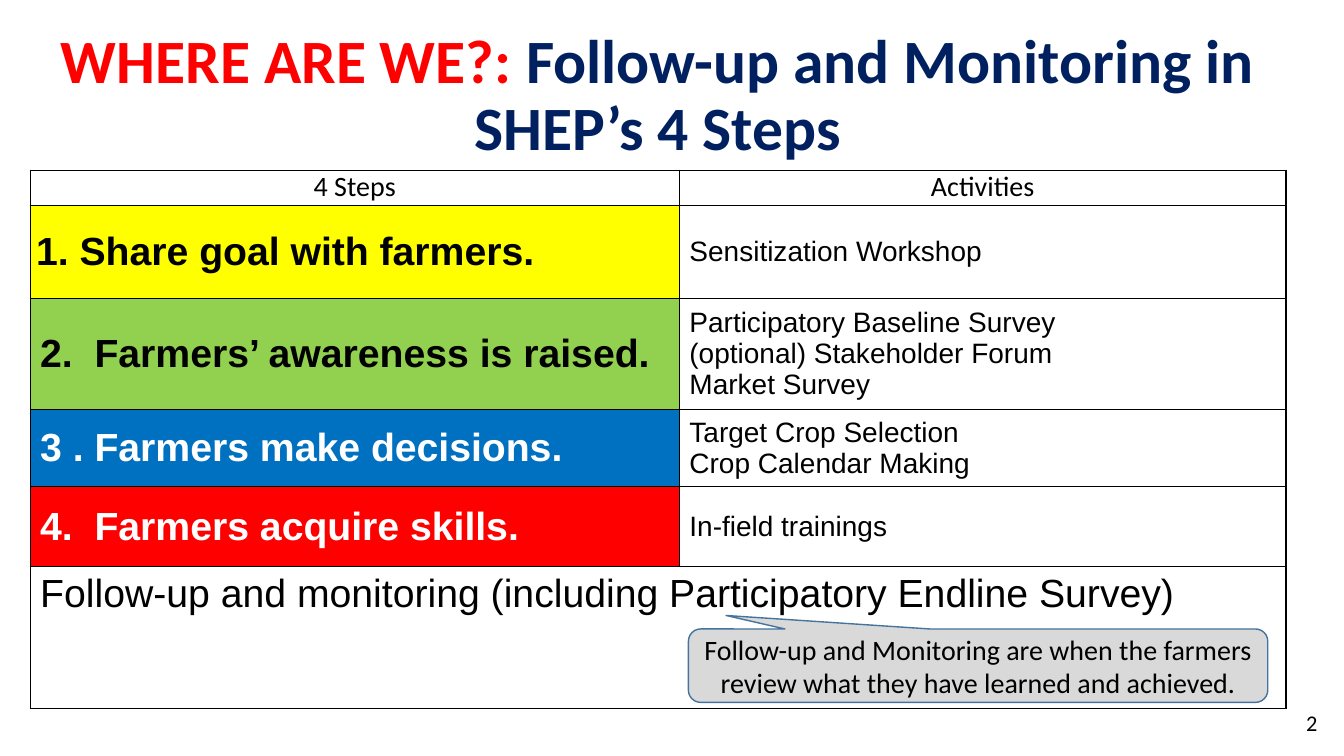
"""Build the slide on follow-up and monitoring in the four steps."""
import pptx
import pptx.dml.color
import pptx.enum.shapes
import pptx.enum.text
import pptx.oxml
import pptx.oxml.ns
import pptx.util

Cm = pptx.util.Cm
Pt = pptx.util.Pt
RGBColor = pptx.dml.color.RGBColor
ALIGN = pptx.enum.text.PP_ALIGN
MIDDLE = pptx.enum.text.MSO_ANCHOR.MIDDLE
TOP = pptx.enum.text.MSO_ANCHOR.TOP

BLACK = RGBColor(0x00, 0x00, 0x00)
WHITE = RGBColor(0xFF, 0xFF, 0xFF)
RED = RGBColor(0xFF, 0x00, 0x00)
NAVY = RGBColor(0x00, 0x20, 0x60)
YELLOW = RGBColor(0xFF, 0xFF, 0x00)
GREEN = RGBColor(0x92, 0xD0, 0x50)
BLUE = RGBColor(0x00, 0x70, 0xC0)
GREY = RGBColor(0xD9, 0xD9, 0xD9)
OUTLINE = RGBColor(0x43, 0x73, 0x9E)

TITLE_FONT = {"name": "Calibri", "size": Pt(44), "bold": True}
BODY_FONT = {"name": "Calibri", "size": Pt(20), "bold": False}
NUMBER_FONT = {"name": "Calibri", "size": Pt(16), "bold": False}
STEP_FONT = {"name": "Arial", "size": Pt(28), "bold": True}
ACTIVITY_FONT = {"name": "Arial", "size": Pt(20), "bold": False}
FOLLOW_UP_FONT = {"name": "Arial", "size": Pt(28), "bold": False}

NARROW = {"margin_left": Cm(0.15), "margin_right": Cm(0.15),
          "margin_top": Cm(0), "margin_bottom": Cm(0)}
STEPS = [
    ("1. Share goal with farmers.", YELLOW, BLACK, NARROW,
     ["Sensitization Workshop"]),
    ("2.  Farmers’ awareness is raised.", GREEN, BLACK, {},
     ["Participatory Baseline Survey", "(optional) Stakeholder Forum",
      "Market Survey"]),
    ("3 . Farmers make decisions.", BLUE, WHITE, {},
     ["Target Crop Selection", "Crop Calendar Making"]),
    ("4.  Farmers acquire skills.", RED, WHITE, {}, ["In-field trainings"]),
]
COLUMN_WIDTHS = [16.36, 15.29]
ROW_HEIGHTS = [0.89, 2.34, 2.62, 1.83, 2.02, 3.56]


def apply_format(target, values):
    """Set each named attribute of the target."""
    for name, value in values.items():
        setattr(target, name, value)


def add_run(paragraph, text, font, color):
    """Add one formatted run to a paragraph."""
    run = paragraph.add_run()
    run.text = text
    apply_format(run.font, font)
    run.font.color.rgb = color


def write_lines(text_frame, lines, font, color=BLACK, alignment=ALIGN.LEFT):
    """Write each line as a paragraph of the text frame."""
    for index, line in enumerate(lines):
        paragraph = text_frame.add_paragraph() if index else text_frame.paragraphs[0]
        paragraph.alignment = alignment
        add_run(paragraph, line, font, color)


def add_text_box(slide, left, top, width, height):
    """Add a wrapping text box and return its text frame."""
    box = slide.shapes.add_textbox(Cm(left), Cm(top), Cm(width), Cm(height))
    apply_format(box.text_frame, {"word_wrap": True, "vertical_anchor": MIDDLE})
    return box.text_frame


def add_title(slide):
    """Add the two-colour title."""
    paragraph = add_text_box(slide, 0, 0.61, 33.17, 3.68).paragraphs[0]
    apply_format(paragraph, {"alignment": ALIGN.CENTER, "line_spacing": 0.9})
    add_run(paragraph, "WHERE ARE WE?: ", TITLE_FONT, RED)
    add_run(paragraph, "Follow-up and Monitoring in SHEP’s 4 Steps", TITLE_FONT, NAVY)


def style_cell(cell, fill=WHITE, anchor=MIDDLE, margins=None):
    """Give a cell its borders, fill, anchor and margins."""
    properties = cell._tc.get_or_add_tcPr()
    for side in "LRTB":
        properties.append(pptx.oxml.parse_xml(
            f'<a:ln{side} {pptx.oxml.ns.nsdecls("a")} w="12700"><a:solidFill>'
            f'<a:srgbClr val="{BLACK}"/></a:solidFill></a:ln{side}>'))
    cell.fill.solid()
    cell.fill.fore_color.rgb = fill
    apply_format(cell, {"vertical_anchor": anchor, **(margins or {})})


def add_steps_table(slide):
    """Add the table of steps and activities."""
    frame = slide.shapes.add_table(
        len(ROW_HEIGHTS), len(COLUMN_WIDTHS), Cm(0.76), Cm(4.29),
        Cm(sum(COLUMN_WIDTHS)), Cm(sum(ROW_HEIGHTS)))
    table = frame.table
    apply_format(table, {"first_row": False, "horz_banding": False})
    for column, width in zip(table.columns, COLUMN_WIDTHS):
        column.width = Cm(width)
    for row, height in zip(table.rows, ROW_HEIGHTS):
        row.height = Cm(height)

    for cell, heading in zip(table.rows[0].cells, ["4 Steps", "Activities"]):
        style_cell(cell, anchor=TOP, margins=NARROW)
        write_lines(cell.text_frame, [heading], BODY_FONT, alignment=ALIGN.CENTER)

    for index, (step, fill, color, margins, activities) in enumerate(STEPS, 1):
        step_cell, activity_cell = table.rows[index].cells
        style_cell(step_cell, fill, margins=margins)
        write_lines(step_cell.text_frame, [step], STEP_FONT, color)
        style_cell(activity_cell)
        write_lines(activity_cell.text_frame, activities, ACTIVITY_FONT)

    follow_up, spanned = table.rows[len(STEPS) + 1].cells
    follow_up.merge(spanned)
    for cell in (follow_up, spanned):
        style_cell(cell, anchor=TOP)
    write_lines(follow_up.text_frame,
                ["Follow-up and monitoring (including Participatory Endline Survey)"],
                FOLLOW_UP_FONT)


def add_callout(slide):
    """Add the callout that explains follow-up and monitoring."""
    callout = slide.shapes.add_shape(
        pptx.enum.shapes.MSO_SHAPE.ROUNDED_RECTANGULAR_CALLOUT,
        Cm(17.35), Cm(15.85), Cm(14.6), Cm(1.85))
    for index, value in enumerate([-0.435, -0.684, 0.167]):
        callout.adjustments[index] = value
    callout.shadow.inherit = False
    callout.fill.solid()
    callout.fill.fore_color.rgb = GREY
    callout.line.color.rgb = OUTLINE
    callout.line.width = Pt(1)
    apply_format(callout.text_frame, {"word_wrap": True, "vertical_anchor": MIDDLE})
    write_lines(callout.text_frame,
                ["Follow-up and Monitoring are when the farmers review what "
                 "they have learned and achieved."],
                BODY_FONT, alignment=ALIGN.CENTER)


def main():
    """Build and save the presentation."""
    presentation = pptx.Presentation()
    apply_format(presentation, {"slide_width": Cm(33.87), "slide_height": Cm(19.05)})
    slide = presentation.slides.add_slide(presentation.slide_layouts[6])
    add_title(slide)
    add_steps_table(slide)
    add_callout(slide)
    number = add_text_box(slide, 25.83, 17.7, 7.62, 1.02)
    write_lines(number, ["2"], NUMBER_FONT, alignment=ALIGN.RIGHT)
    presentation.save("out.pptx")


if __name__ == "__main__":
    main()
